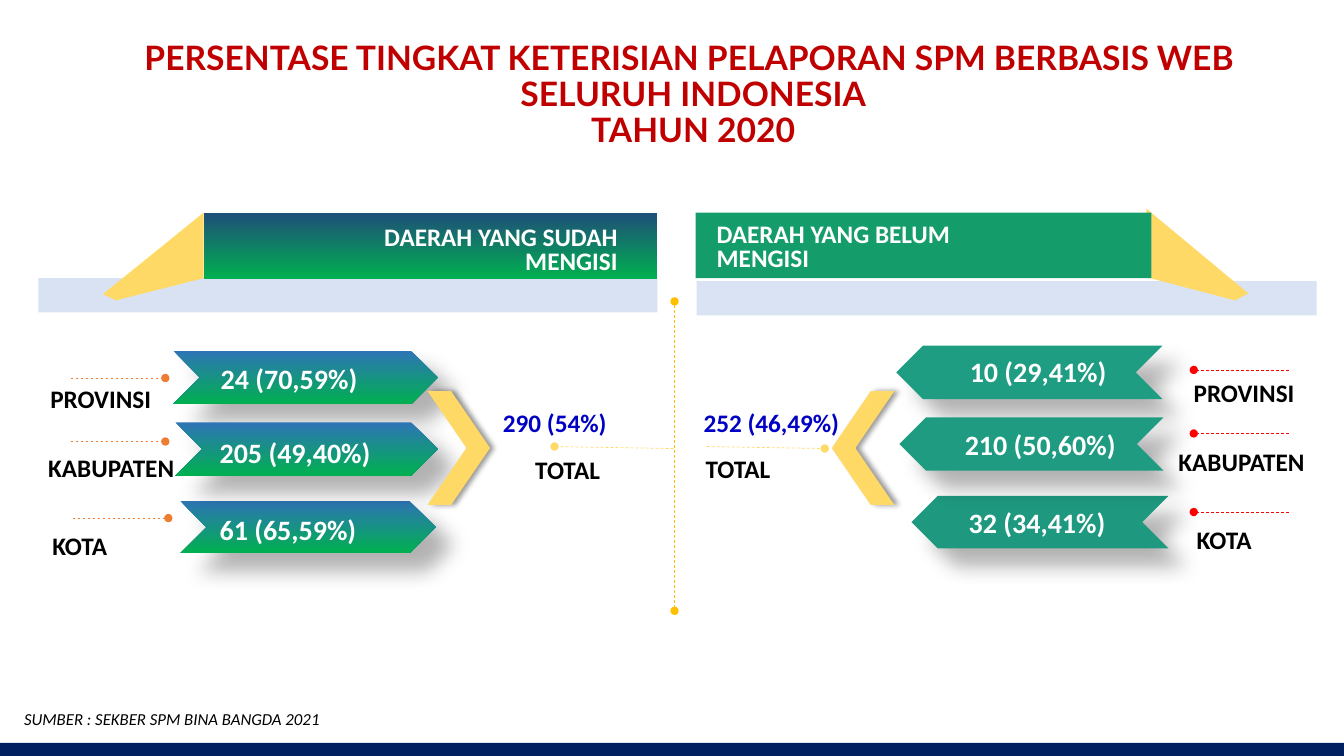
from lxml import etree
from pptx import Presentation
from pptx.dml.color import RGBColor
from pptx.enum.dml import MSO_LINE
from pptx.enum.shapes import MSO_CONNECTOR, MSO_SHAPE
from pptx.enum.text import MSO_ANCHOR, MSO_AUTO_SIZE, PP_ALIGN
from pptx.oxml import parse_xml
from pptx.oxml.ns import nsdecls, qn
from pptx.util import Inches, Pt

WHITE = RGBColor(0xFF, 0xFF, 0xFF)
BLACK = RGBColor(0x00, 0x00, 0x00)
NAVY = RGBColor(0x00, 0x20, 0x60)
DARK_RED = RGBColor(0xC0, 0x00, 0x00)
RED = RGBColor(0xFF, 0x00, 0x00)
ORANGE = RGBColor(0xED, 0x7D, 0x31)
GOLD = RGBColor(0xFF, 0xC0, 0x00)
YELLOW = RGBColor(0xFF, 0xD9, 0x66)
TOTAL_BLUE = RGBColor(0x00, 0x00, 0xC4)
DARK_BLUE = RGBColor(0x1F, 0x4E, 0x79)
BLUE = RGBColor(0x2E, 0x75, 0xB6)
GREEN = RGBColor(0x00, 0xB0, 0x50)
TEAL = RGBColor(0x14, 0x9D, 0x6A)
TEAL_TOP = RGBColor(0x1E, 0x9D, 0x83)
TEAL_MIDDLE = RGBColor(0x1E, 0x9B, 0x81)
TEAL_BOTTOM = RGBColor(0x1E, 0x99, 0x80)
SHELF_LEFT = RGBColor(0xB4, 0xC7, 0xE7)
SHELF_RIGHT = RGBColor(0xD9, 0xE3, 0xF3)
ARROW_SHADOW = (30, 15, 18, 45)
BRACKET_SHADOW = (40, 4, 3, 0)


def style_shape(shape, colors, shadow=None):
    """Fill with one colour, or a downward gradient of two; shadow is opacity, blur, distance, angle."""
    shape.shadow.inherit = False
    shape.line.fill.background()
    if len(colors) == 1:
        shape.fill.solid()
        shape.fill.fore_color.rgb = colors[0]
    else:
        shape.fill.gradient()
        shape.fill.gradient_angle = 270
        for stop, color in zip(shape.fill.gradient_stops, colors):
            stop.color.rgb = color
    if shadow:
        opacity, blur, distance, angle = shadow
        effects = shape._element.spPr.find(qn("a:effectLst"))
        effects.append(parse_xml(
            f'<a:outerShdw {nsdecls("a")} blurRad="{Pt(blur)}" dist="{Pt(distance)}" '
            f'dir="{angle * 60000}" algn="ctr" rotWithShape="0"><a:srgbClr val="000000">'
            f'<a:alpha val="{opacity * 1000}"/></a:srgbClr></a:outerShdw>'))
    return shape


def add_text(text, box, shape=None, size=18, color=BLACK, font="Calibri", bold=True,
             italic=False, align=PP_ALIGN.LEFT, spacing=1.0, wrap=True, level=0):
    box = [Inches(length) for length in box]
    if shape is None:
        shape = slide.shapes.add_textbox(*box)
    shape.left, shape.top, shape.width, shape.height = box
    frame = shape.text_frame
    frame.text = text
    frame.word_wrap = wrap
    frame.auto_size = MSO_AUTO_SIZE.SHAPE_TO_FIT_TEXT
    frame.vertical_anchor = MSO_ANCHOR.TOP
    for paragraph in frame.paragraphs:
        paragraph.alignment = align
        paragraph.line_spacing = spacing
        paragraph.space_before = Pt(0)
        paragraph.level = level
        paragraph.font.name = font
        paragraph.font.size = Pt(size)
        paragraph.font.bold = bold
        paragraph.font.italic = italic
        paragraph.font.color.rgb = color


presentation = Presentation()
presentation.slide_width = Inches(13.33)
presentation.slide_height = Inches(7.5)
slide = presentation.slides.add_slide(presentation.slide_layouts[5])

add_text("PERSENTASE TINGKAT KETERISIAN PELAPORAN SPM BERBASIS WEB \nSELURUH INDONESIA\nTAHUN 2020",
         (0.97, 0.36, 11.81, 1.19), shape=slide.shapes.title, size=24, color=DARK_RED,
         font="Lato", align=PP_ALIGN.CENTER, spacing=0.9)

# Footer band, shelves and folded ribbons
bands = [
    ((0, 7.37, 13.33, 0.13), [NAVY]),
    ((0.38, 2.76, 6.14, 0.34), [SHELF_LEFT]),
    ((6.91, 2.79, 6.15, 0.34), [SHELF_RIGHT]),
]
for box, colors in bands:
    band = slide.shapes.add_shape(MSO_SHAPE.RECTANGLE, *map(Inches, box))
    style_shape(band, colors)
    if colors == [SHELF_LEFT]:
        shelf_color = band._element.spPr.find(qn("a:solidFill"))[0]
        etree.SubElement(shelf_color, qn("a:alpha"), val="50000")

ribbons = [
    ([(2.02, 2.11), (1.02, 2.92), (1.15, 2.98), (2.02, 2.76)],
     (2.02, 2.11, 4.5, 0.66), [DARK_BLUE, GREEN]),
    ([(11.37, 2.07), (12.38, 2.91), (12.25, 2.98), (11.37, 2.75)],
     (6.9, 2.11, 4.52, 0.65), [TEAL]),
]
for fold, box, colors in ribbons:
    corners = [(Inches(x), Inches(y)) for x, y in fold]
    builder = slide.shapes.build_freeform(*corners[0])
    builder.add_line_segments(corners[1:], close=True)
    style_shape(builder.convert_to_shape(), [YELLOW])
    style_shape(slide.shapes.add_shape(MSO_SHAPE.RECTANGLE, *map(Inches, box)), colors)

add_text("DAERAH YANG SUDAH \nMENGISI ", (2.03, 2.2, 4.25, 0.59), color=WHITE,
         align=PP_ALIGN.RIGHT, spacing=0.8)
add_text("DAERAH YANG BELUM\nMENGISI", (7.01, 2.17, 4.32, 0.59), color=WHITE, spacing=0.8)

# Dashed leaders ending in dots
leaders = [
    ((6.69, 2.99), (6.69, 6.06), GOLD),
    ((6.68, 4.45), (5.5, 4.43), YELLOW),
    ((7.01, 4.43), (8.18, 4.45), YELLOW),
    ((0.7, 3.75), (1.64, 3.75), ORANGE),
    ((0.7, 4.38), (1.64, 4.38), ORANGE),
    ((0.72, 5.14), (1.67, 5.14), ORANGE),
]
leaders += [((12.78, y), (11.84, y), RED) for y in (3.67, 4.3, 5.08)]
for start, end, color in leaders:
    leader = slide.shapes.add_connector(MSO_CONNECTOR.STRAIGHT, *map(Inches, start + end))
    leader.line.color.rgb = color
    leader.line.width = Pt(0.5)
    leader.line.dash_style = MSO_LINE.DASH
    line = leader.line._get_or_add_ln()
    if color == GOLD:
        etree.SubElement(line, qn("a:headEnd"), type="oval")
    etree.SubElement(line, qn("a:tailEnd"), type="oval")
    etree.SubElement(leader._element.spPr, qn("a:effectLst"))

# Region labels, then the arrows
for name, width, left_x, right_x, left_y in [
    ("PROVINSI", 1.21, 0.4, 11.74, 3.75),
    ("KABUPATEN", 1.46, 0.38, 11.59, 4.44),
    ("KOTA", 0.75, 0.42, 11.77, 5.21),
]:
    add_text(name, (left_x, left_y, width, 0.4), wrap=False)
    add_text(name, (right_x, left_y - 0.06, width, 0.4), wrap=False)

brackets = [((4.24, 3.88, 0.62, 1.13), 0), ((8.25, 3.88, 0.62, 1.13), 180)]
arrows = [
    ((1.72, 3.48, 2.62, 0.53), [BLUE, GREEN], False),
    ((1.79, 4.97, 2.53, 0.52), [BLUE, GREEN], False),
    ((1.74, 4.19, 2.6, 0.53), [BLUE, GREEN], False),
    ((8.89, 3.43, 2.64, 0.53), [TEAL_TOP], True),
    ((9.04, 4.92, 2.55, 0.52), [TEAL_BOTTOM], True),
    ((8.92, 4.14, 2.62, 0.53), [TEAL_MIDDLE], True),
]
for box, colors, points_left in arrows:
    arrow = slide.shapes.add_shape(MSO_SHAPE.CHEVRON, *map(Inches, box))
    style_shape(arrow, colors, ARROW_SHADOW)
    if points_left:
        arrow._element.spPr.xfrm.set("flipH", "1")

for box, rotation in brackets:
    bracket = slide.shapes.add_shape(MSO_SHAPE.CHEVRON, *map(Inches, box))
    bracket.adjustments[0] = 0.623
    bracket.rotation = rotation
    style_shape(bracket, [YELLOW], BRACKET_SHADOW)

# Figures
for value, x, y, width, level in [
    ("24 (70,59%)", 2.09, 3.54, 2.07, 0),
    ("205 (49,40%)", 2.08, 4.27, 2.25, 0),
    ("61 (65,59%)", 2.08, 5.04, 2.07, 0),
    ("10 (29,41%)", 9.52, 3.47, 2.07, 0),
    ("210 (50,60%)", 8.97, 4.19, 2.25, 1),
    ("32 (34,41%)", 9.51, 4.97, 2.07, 0),
]:
    add_text(value, (x, y, width, 0.44), size=20, color=WHITE, level=level)

for total, total_x, label_x, label_y in [
    ("290 (54%)", 4.89, 5.21, 4.46),
    ("252 (46,49%)", 6.88, 6.9, 4.45),
]:
    add_text(total, (total_x, 3.99, 1.71, 0.4), color=TOTAL_BLUE)
    add_text("TOTAL", (label_x, label_y, 0.85, 0.4), wrap=False)

add_text("SUMBER : SEKBER SPM BINA BANGDA 2021", (0.14, 6.98, 3.17, 0.3),
         size=12, bold=False, italic=True, wrap=False)

presentation.save("out.pptx")
